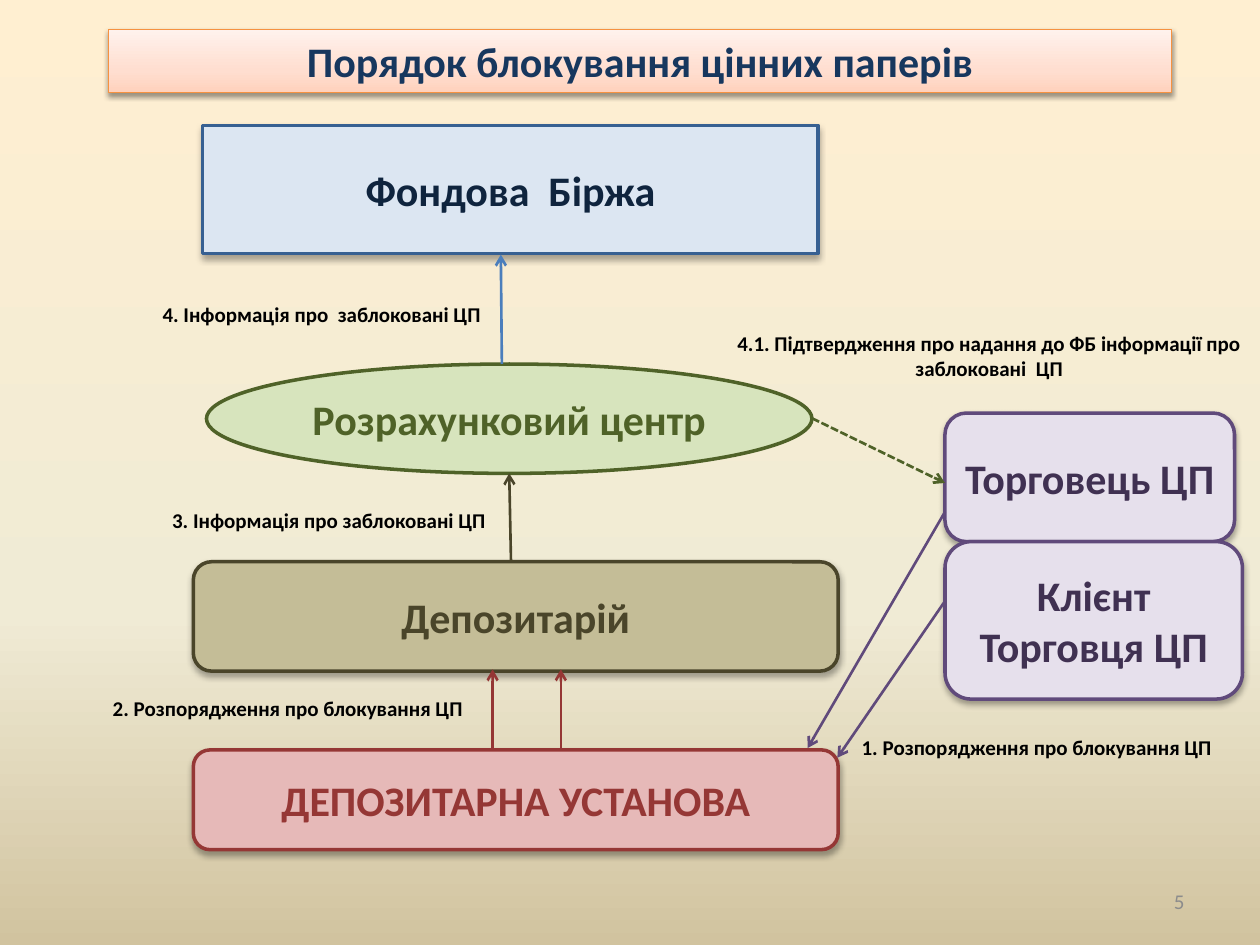
from dataclasses import dataclass

from lxml import etree
from pptx import Presentation
from pptx import util as u
from pptx.dml.color import RGBColor
from pptx.enum import dml, shapes, text
from pptx.oxml.ns import qn

FONT = "Calibri"
BLACK = RGBColor(0x00, 0x00, 0x00)
GREY = RGBColor(0x8C, 0x8C, 0x8C)
NAVY = RGBColor(0x17, 0x37, 0x5E)
ORANGE = RGBColor(0xF6, 0x92, 0x40)
INK = RGBColor(0x0F, 0x24, 0x3E)
BLUE = RGBColor(0x37, 0x60, 0x92)
ARROW_BLUE = RGBColor(0x4B, 0x7E, 0xBC)
PALE_BLUE = RGBColor(0xDC, 0xE6, 0xF2)
GREEN = RGBColor(0x4F, 0x62, 0x28)
PALE_GREEN = RGBColor(0xD7, 0xE4, 0xBD)
OLIVE = RGBColor(0x4A, 0x45, 0x2A)
TAN = RGBColor(0xC4, 0xBD, 0x97)
RED = RGBColor(0x95, 0x37, 0x35)
PINK = RGBColor(0xE6, 0xB9, 0xB8)
PURPLE = RGBColor(0x60, 0x4A, 0x7B)
DARK_PURPLE = RGBColor(0x40, 0x31, 0x52)
LILAC = RGBColor(0xE6, 0xE0, 0xEC)

PAGE_STOPS = [(0, RGBColor(0xFF, 0xEF, 0xD1)), (65, RGBColor(0xF0, 0xEB, 0xD5)),
              (100, RGBColor(0xD1, 0xC3, 0x9F))]
TITLE_STOPS = [(0, RGBColor(0xFF, 0xD2, 0xBD)), (35, RGBColor(0xFF, 0xDE, 0xD0)),
               (100, RGBColor(0xFF, 0xF2, 0xED))]

RECT = shapes.MSO_SHAPE.RECTANGLE
ROUND = shapes.MSO_SHAPE.ROUNDED_RECTANGLE
OVAL = shapes.MSO_SHAPE.OVAL
CENTER = text.PP_ALIGN.CENTER
MIDDLE = text.MSO_ANCHOR.MIDDLE
TOP = text.MSO_ANCHOR.TOP


@dataclass(frozen=True)
class Shadow:
    opacity: int
    blur: float
    distance: float


SOFT = Shadow(32, 3.5, 2.2)
TITLE_SHADOW = Shadow(38, 3.1, 1.6)


@dataclass(frozen=True)
class Node:
    words: str
    frame: tuple  # left, top, width, height
    kind: int
    fill: RGBColor | None
    line: RGBColor
    ink: RGBColor
    weight: float = 2
    shadow: Shadow | None = SOFT
    anchor: int = MIDDLE


@dataclass(frozen=True)
class Arrow:
    start: tuple
    end: tuple
    color: RGBColor
    dashed: bool = False


@dataclass(frozen=True)
class Label:
    words: str
    frame: tuple
    wrap: bool = False
    align: int = CENTER
    ink: RGBColor = BLACK
    bold: bool = True
    anchor: int = TOP


TITLE = Node("Порядок блокування цінних паперів", (62, 16.8, 607.5, 36), RECT,
             None, ORANGE, NAVY, 0.75, TITLE_SHADOW, TOP)
NODES = [
    Node("Розрахунковий центр", (118, 208, 346, 62.5), OVAL,
         PALE_GREEN, GREEN, GREEN, shadow=None),
    Node("Фондова  Біржа", (116, 71.5, 351.5, 73.5), RECT, PALE_BLUE, BLUE, INK, 1.75),
    Node("Депозитарій", (110.5, 321, 368.5, 62.5), ROUND, TAN, OLIVE, OLIVE),
    Node("Торговець ЦП", (540, 236, 165.5, 73.5), ROUND, LILAC, PURPLE, DARK_PURPLE),
    Node("ДЕПОЗИТАРНА УСТАНОВА", (110.5, 428.5, 368.5, 57), ROUND, PINK, RED, RED),
    Node("Клієнт Торговця ЦП", (540, 309.5, 170, 90), ROUND, LILAC, PURPLE, DARK_PURPLE),
]
ARROWS = [
    Arrow((286.8, 208), (286.2, 145.5), ARROW_BLUE),
    Arrow((464, 239), (540, 276), GREEN, dashed=True),
    Arrow((540, 343.5), (478.5, 433), PURPLE),
    Arrow((540, 292.5), (461.5, 427.5), PURPLE),
    Arrow((292, 321), (291, 270.5), OLIVE),
    Arrow((281.5, 428), (281.5, 382.5), RED),
    Arrow((320.5, 428), (320.5, 382.5), RED),
]
LABELS = [
    Label("4. Інформація про  заблоковані ЦП ", (84.5, 168.5, 201.5, 21.8)),
    Label("4.1. Підтвердження про надання до ФБ інформації про заблоковані  ЦП",
          (410.5, 185.5, 309.5, 36), wrap=True),
    Label("3. Інформація про заблоковані ЦП", (90, 286.7, 196, 21.8)),
    Label("2. Розпорядження про блокування ЦП", (56, 393.8, 217, 21.8)),
    Label("1. Розпорядження про блокування ЦП", (484, 416.3, 217, 21.8)),
    Label("5", (516, 500.5, 168, 28.8), True, text.PP_ALIGN.RIGHT, GREY, False, MIDDLE),
]


def points(values: tuple) -> list:
    return [u.Pt(value) for value in values]


def paint_gradient(fill, owner, stops: list, angle: int) -> None:
    fill.gradient()
    gradient = next(owner.iter(qn("a:gradFill")))
    stop_list = gradient.find(qn("a:gsLst"))
    for old in list(stop_list):
        stop_list.remove(old)
    for position, color in stops:
        stop = etree.SubElement(stop_list, qn("a:gs"), pos=str(position * 1000))
        etree.SubElement(stop, qn("a:srgbClr"), val=str(color))
    gradient.find(qn("a:lin")).set("ang", str(angle * 60000))


def cast_shadow(box, shadow: Shadow) -> None:
    effects = box._element.spPr.find(qn("a:effectLst"))
    outer = etree.SubElement(effects, qn("a:outerShdw"), blurRad=str(u.Pt(shadow.blur)),
                             dist=str(u.Pt(shadow.distance)), dir="5400000", rotWithShape="0")
    color = etree.SubElement(outer, qn("a:srgbClr"), val=str(BLACK))
    etree.SubElement(color, qn("a:alpha"), val=str(shadow.opacity * 1000))


def write(box, words: str, size: int, ink: RGBColor, bold: bool, align: int, anchor: int) -> None:
    frame = box.text_frame
    frame.text = words
    frame.vertical_anchor = anchor
    para = frame.paragraphs[0]
    para.alignment = align
    for span in para.runs:
        span.font.name = FONT
        span.font.size = u.Pt(size)
        span.font.bold = bold
        span.font.color.rgb = ink


def draw_node(page, node: Node) -> None:
    box = page.shapes.add_shape(node.kind, *points(node.frame))
    if node.fill is None:
        paint_gradient(box.fill, box._element, TITLE_STOPS, 270)
    else:
        box.fill.solid()
        box.fill.fore_color.rgb = node.fill
    box.line.color.rgb = node.line
    box.line.width = u.Pt(node.weight)
    box.shadow.inherit = False
    if node.shadow:
        cast_shadow(box, node.shadow)
    box.text_frame.word_wrap = True
    write(box, node.words, 24, node.ink, True, CENTER, node.anchor)


def draw_arrow(page, arrow: Arrow) -> None:
    connector = page.shapes.add_connector(shapes.MSO_CONNECTOR.STRAIGHT,
                                          *points(arrow.start + arrow.end))
    connector.line.color.rgb = arrow.color
    connector.line.width = u.Pt(1.5)
    if arrow.dashed:
        connector.line.dash_style = dml.MSO_LINE.SQUARE_DOT
    properties = connector._element.spPr
    etree.SubElement(properties.find(qn("a:ln")), qn("a:tailEnd"), type="arrow")
    etree.SubElement(properties, qn("a:effectLst"))


def draw_label(page, label: Label) -> None:
    box = page.shapes.add_textbox(*points(label.frame))
    box.text_frame.word_wrap = label.wrap
    write(box, label.words, 12, label.ink, label.bold, label.align, label.anchor)


def main() -> None:
    deck = Presentation()
    deck.slide_width, deck.slide_height = u.Pt(720), u.Pt(540)
    page = deck.slides.add_slide(deck.slide_layouts[6])
    paint_gradient(page.background.fill, page._element, PAGE_STOPS, 90)

    # Title and participants
    for node in [TITLE, *NODES]:
        draw_node(page, node)
    # Flow between participants
    for arrow in ARROWS:
        draw_arrow(page, arrow)
    # Step captions and page number
    for label in LABELS:
        draw_label(page, label)

    deck.save("out.pptx")


if __name__ == "__main__":
    main()
